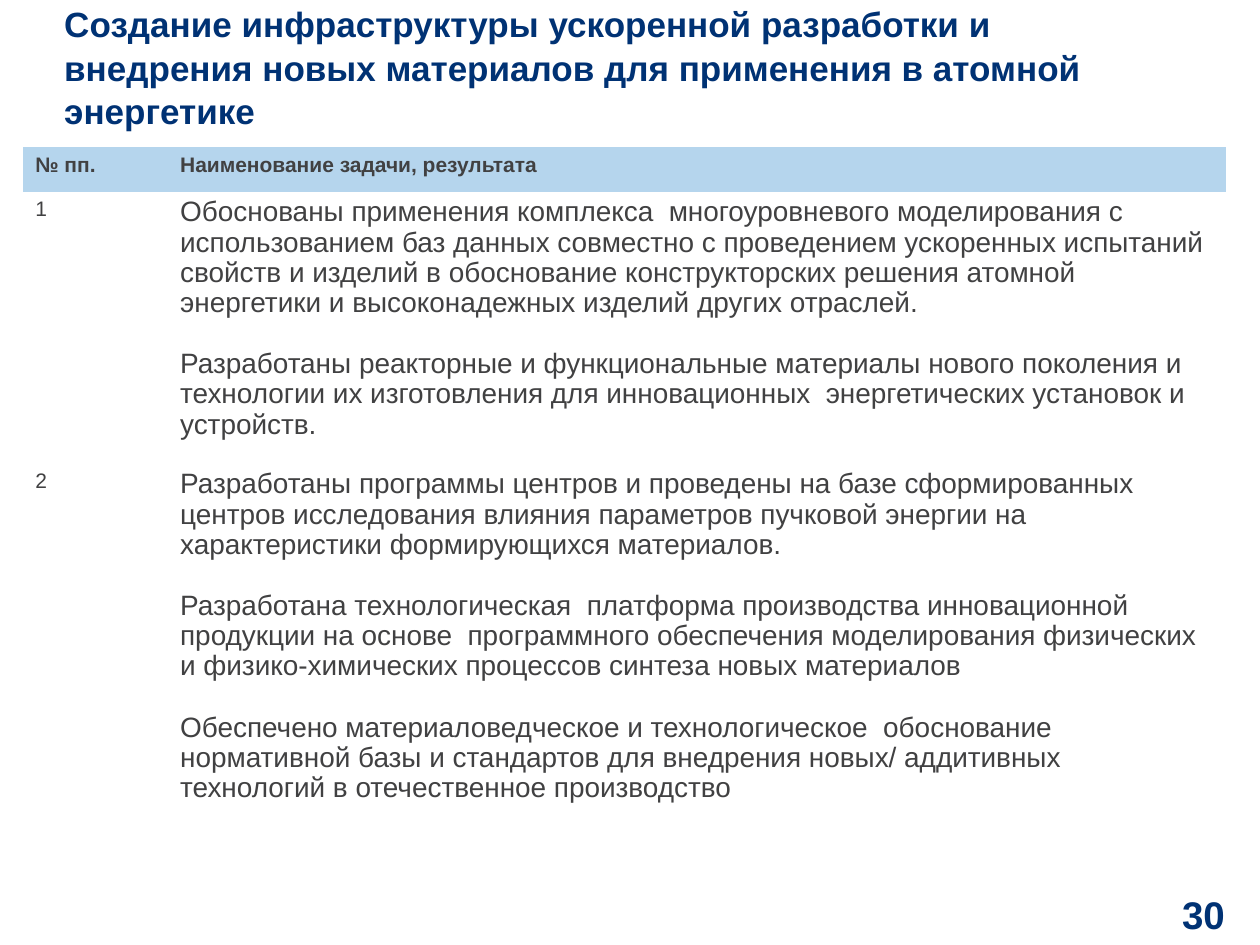
from pptx import Presentation
from pptx.dml.color import RGBColor
from pptx.enum.text import MSO_ANCHOR, PP_ALIGN
from pptx.util import Inches, Pt

NAVY = RGBColor(0x00, 0x32, 0x74)
GRAY = RGBColor(0x41, 0x41, 0x42)
LIGHT_BLUE = RGBColor(0xB5, 0xD5, 0xED)
NO_STYLE_NO_GRID = "{2D5ABB26-0587-4C30-8999-92F81FD0307C}"

HEADINGS = ["№ пп.", "Наименование задачи, результата"]
TASKS = [
    [
        "Обоснованы применения комплекса  многоуровневого моделирования с использованием баз данных совместно с проведением ускоренных испытаний свойств и изделий в обоснование конструкторских решения атомной энергетики и высоконадежных изделий других отраслей.",
        "Разработаны реакторные и функциональные материалы нового поколения и технологии их изготовления для инновационных  энергетических установок и устройств.",
    ],
    [
        "Разработаны программы центров и проведены на базе сформированных центров исследования влияния параметров пучковой энергии на характеристики формирующихся материалов.",
        "Разработана технологическая  платформа производства инновационной продукции на основе  программного обеспечения моделирования физических и физико-химических процессов синтеза новых материалов",
        "Обеспечено материаловедческое и технологическое  обоснование нормативной базы и стандартов для внедрения новых/ аддитивных технологий в отечественное производство",
    ],
]


def write(tf, texts, size, color, bold=False, spacing=1.0, gap=0, align=PP_ALIGN.LEFT):
    for i, text in enumerate(texts):
        p = tf.add_paragraph() if i else tf.paragraphs[0]
        p.alignment = align
        p.line_spacing = spacing
        p.space_before = Pt(gap if i else 0)
        r = p.add_run()
        r.text = text
        r.font.name = "Arial"
        r.font.size = Pt(size)
        r.font.bold = bold
        r.font.color.rgb = color


def add_text(left, top, width, height, text, size, **fmt):
    tf = s.shapes.add_textbox(Inches(left), Inches(top), Inches(width), Inches(height)).text_frame
    tf.word_wrap = True
    tf.vertical_anchor = MSO_ANCHOR.MIDDLE
    tf.margin_left = tf.margin_right = tf.margin_top = tf.margin_bottom = 0
    write(tf, [text], size, NAVY, bold=True, **fmt)


prs = Presentation()
prs.slide_width, prs.slide_height = Inches(10), Inches(7.5)
s = prs.slides.add_slide(prs.slide_layouts[6])

add_text(0.51, 0, 8.35, 1.05,
         "Создание инфраструктуры ускоренной разработки и внедрения новых материалов для применения в атомной энергетике",
         20, spacing=1.04)
add_text(9.03, 7.05, 0.69, 0.41, "30", 22, align=PP_ALIGN.RIGHT)

widths = [1.15, 8.4]
heights = [0.35, 2.08, 2.82]
table = s.shapes.add_table(len(heights), len(widths), Inches(0.18), Inches(1.17),
                           Inches(sum(widths)), Inches(sum(heights))).table
table.horz_banding = False
table._tbl.tblPr.find("{*}tableStyleId").text = NO_STYLE_NO_GRID
for col, width in zip(table.columns, widths):
    col.width = Inches(width)
for row, height in zip(table.rows, heights):
    row.height = Inches(height)

for c, heading in enumerate(HEADINGS):
    cell = table.cell(0, c)
    cell.fill.solid()
    cell.fill.fore_color.rgb = LIGHT_BLUE
    write(cell.text_frame, [heading], 12, GRAY, bold=True)

for number, results in enumerate(TASKS, 1):
    number_cell, result_cell = table.rows[number].cells
    for cell in (number_cell, result_cell):
        cell.fill.background()
    write(number_cell.text_frame, [str(number)], 12, GRAY)
    write(result_cell.text_frame, results, 16, GRAY, spacing=0.97, gap=17.8)

prs.save("out.pptx")
